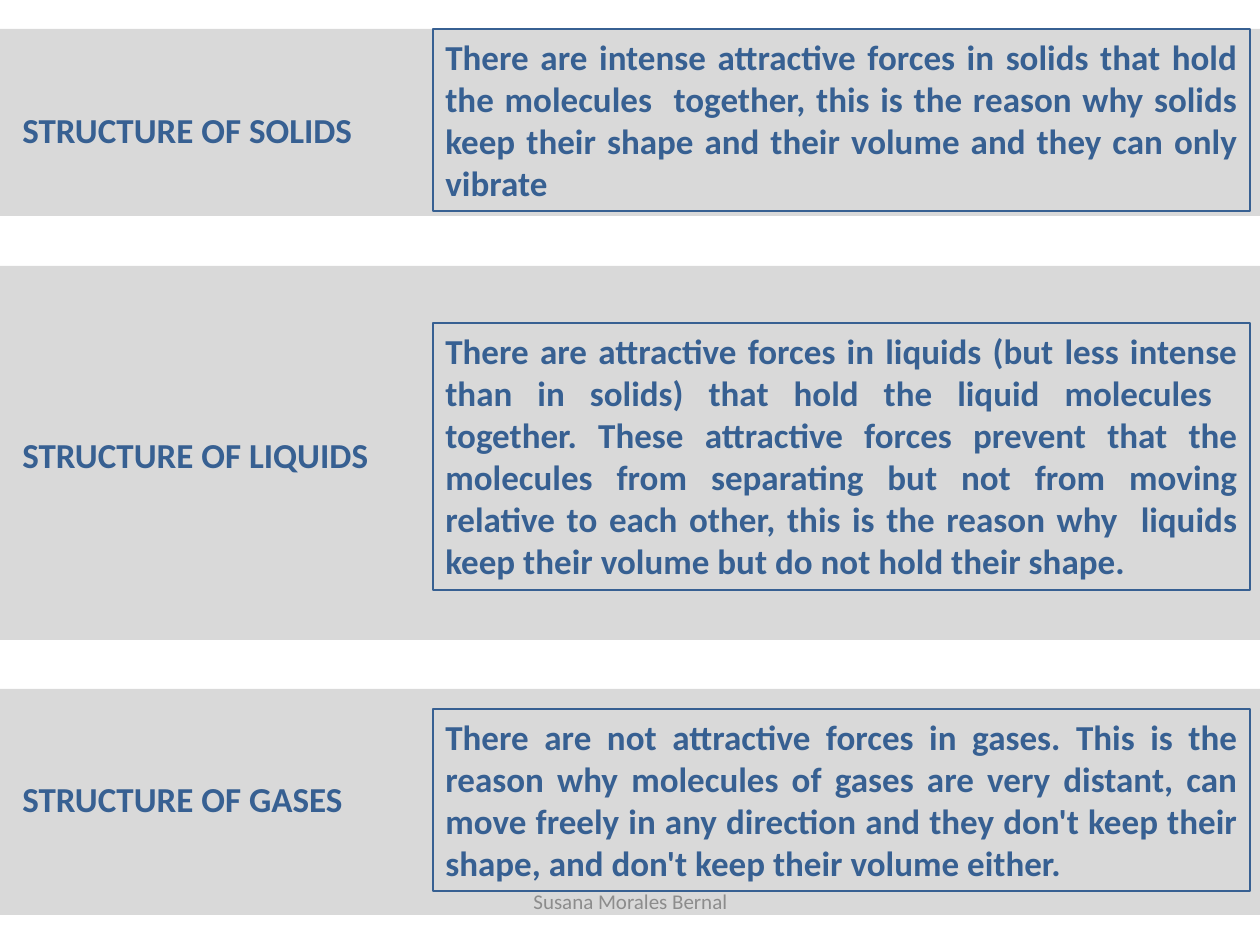
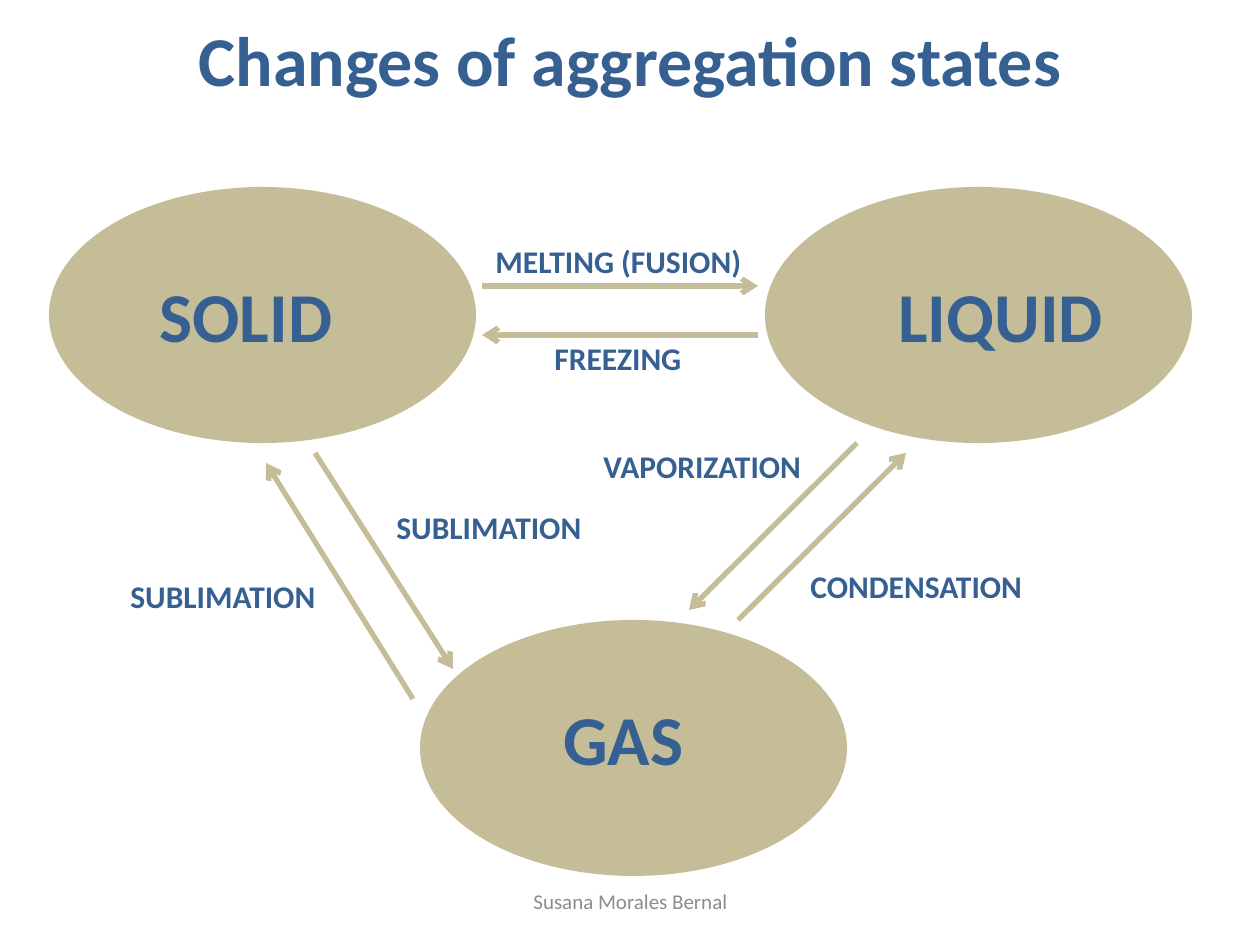
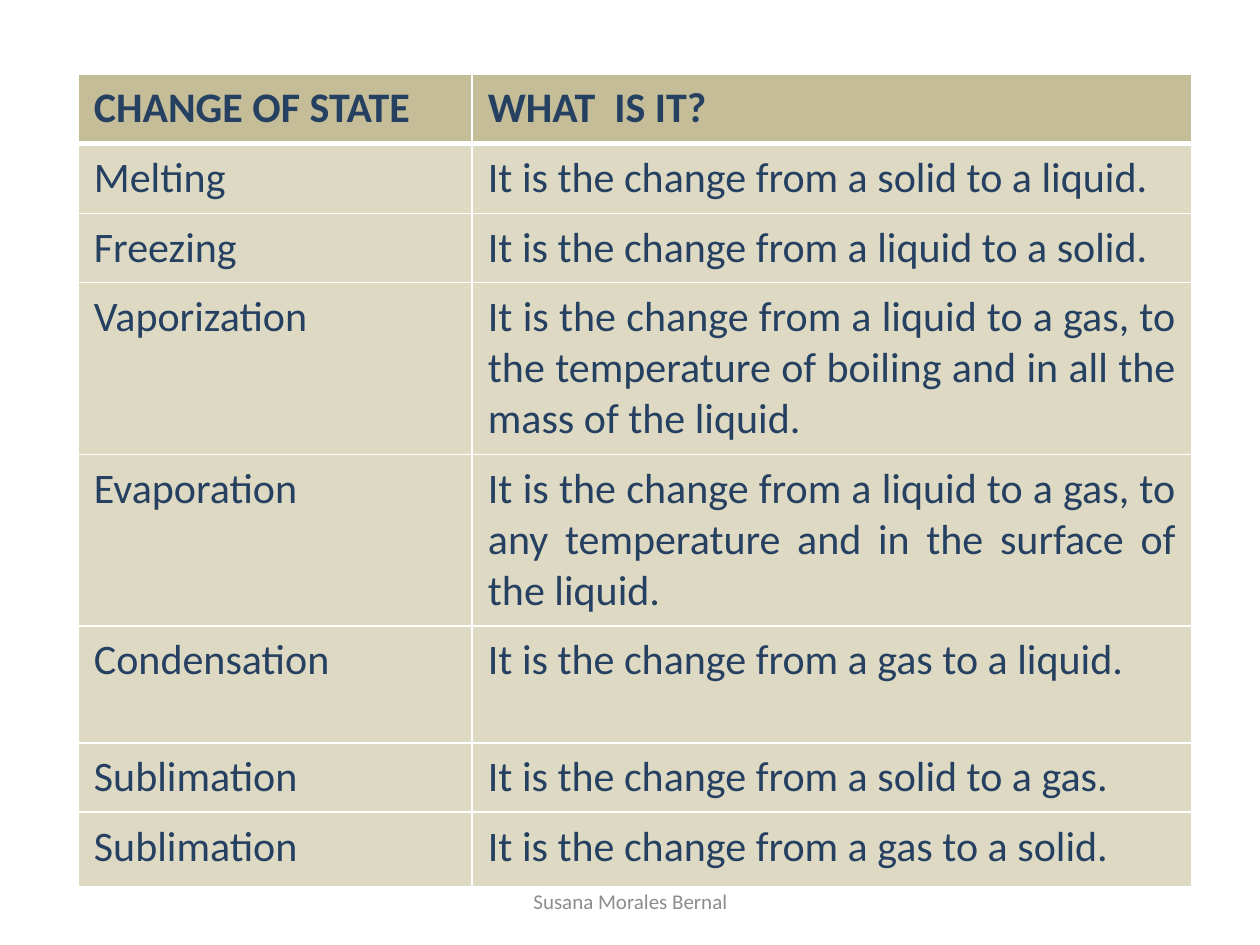
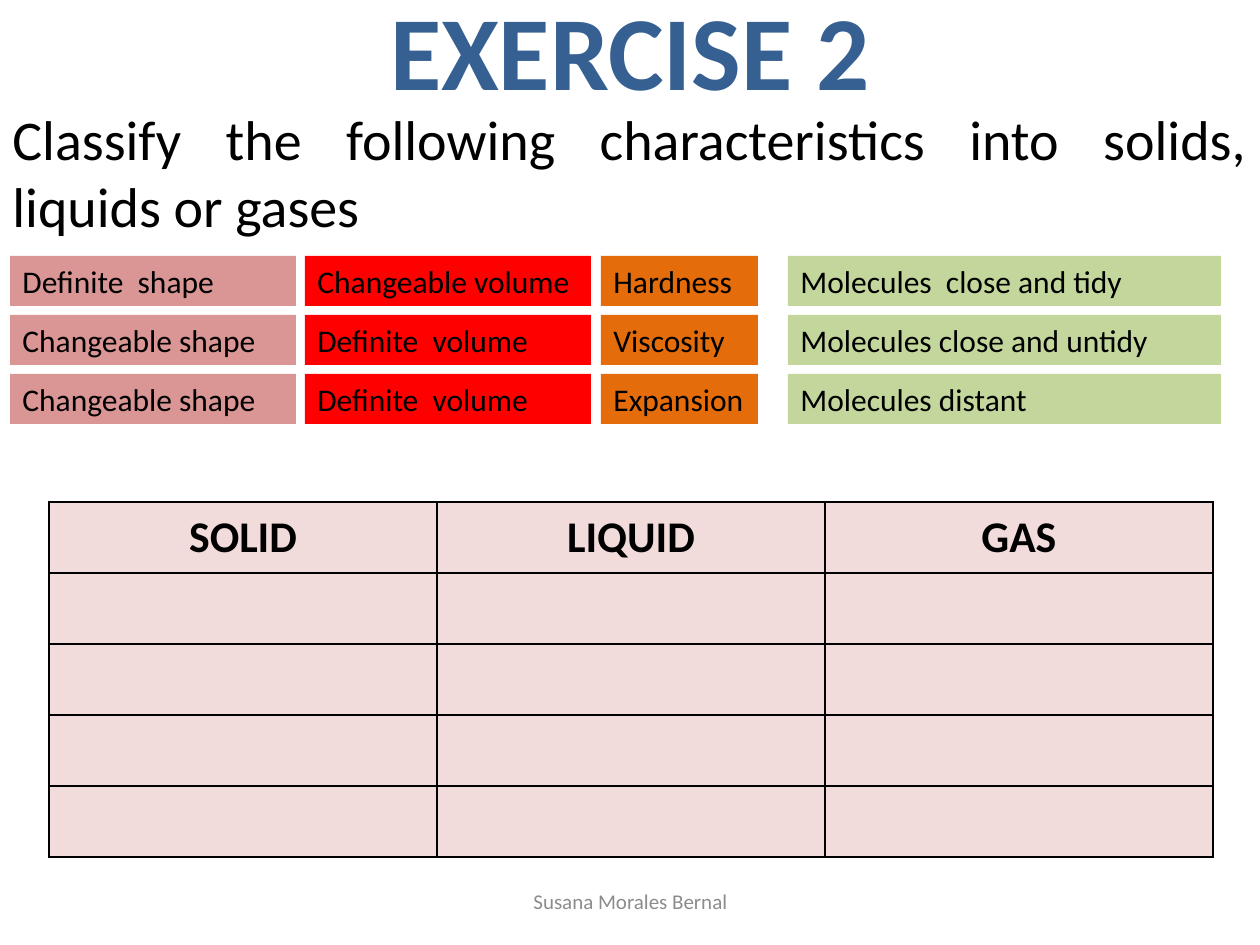
from dataclasses import dataclass

from lxml.etree import SubElement
from pptx import Presentation
from pptx.dml.color import RGBColor
from pptx.enum.shapes import MSO_CONNECTOR, MSO_SHAPE
from pptx.enum.text import MSO_ANCHOR as ANCHOR, MSO_AUTO_SIZE, PP_ALIGN as ALIGN
from pptx.oxml.ns import qn
from pptx.util import Emu, Pt

TITLE_ONLY, BLANK = 5, 6  # layouts of the default template


@dataclass(frozen=True)
class Theme:
    font: str = "Calibri"
    # Colours
    blue: str = "376092"
    navy: str = "254061"
    black: str = "000000"
    white: str = "FFFFFF"
    footer: str = "8C8C8C"
    band: str = "D9D9D9"
    khaki: str = "C4BD97"
    sand: str = "DDD9C3"
    blush: str = "F2DCDB"
    rose: str = "D99694"
    red: str = "FF0000"
    orange: str = "E46C0A"
    green: str = "C3D69B"
    # Type sizes
    exercise: int = 60
    title: int = 40
    task: int = 32
    answers: int = 25
    table: int = 24
    text: int = 20
    label: int = 18
    small: int = 12


T = Theme()


# Basic helpers
def px(n):
    return Emu(round(n * 914400 / 126))


def rgb(value):
    return RGBColor.from_string(value)


def paint(fill, color):
    fill.solid()
    fill.fore_color.rgb = rgb(color)


def write(tf, text, size, color, bold=False, align=ALIGN.LEFT):
    p = tf.paragraphs[0]
    p.text = text
    p.alignment = align
    p.font.name, p.font.size, p.font.bold = T.font, Pt(size), bold
    p.font.color.rgb = rgb(color)


# Kinds of element
def add_text(s, box, text, size, color=T.blue, bold=False, align=ALIGN.LEFT,
             fill=None, line=None, anchor=ANCHOR.TOP):
    sp = s.shapes.add_textbox(*map(px, box))
    if fill:
        paint(sp.fill, fill)
    if line:
        sp.line.color.rgb = rgb(line)
        sp.line.width = Pt(0.75)
    tf = sp.text_frame
    tf.word_wrap = True
    tf.vertical_anchor = anchor
    write(tf, text, size, color, bold, align)


def add_title(s, top, height, text, size):
    sp = s.shapes.title
    sp.left, sp.top, sp.width, sp.height = map(px, (0, top, 1260, height))
    tf = sp.text_frame
    tf.auto_size = MSO_AUTO_SIZE.NONE
    tf.vertical_anchor = ANCHOR.TOP
    write(tf, text, size, T.blue, True, ALIGN.CENTER)


def add_filled(s, kind, box, color):
    sp = s.shapes.add_shape(kind, *map(px, box))
    sp.shadow.inherit = False
    paint(sp.fill, color)
    sp.line.fill.background()


def add_arrow(s, x1, y1, x2, y2):
    cx = s.shapes.add_connector(MSO_CONNECTOR.STRAIGHT, *map(px, (x1, y1, x2, y2)))
    cx.line.color.rgb = rgb(T.khaki)
    cx.line.width = Pt(3)
    SubElement(cx.line._get_or_add_ln(), qn("a:tailEnd"), type="arrow")
    SubElement(cx._element.spPr, qn("a:effectLst"))


def add_table(s, left, top, widths, heights):
    shape = s.shapes.add_table(len(heights), len(widths), px(left), px(top),
                               px(sum(widths)), px(sum(heights)))
    table = shape.table
    table.first_row = table.horz_banding = False
    for column, width in zip(table.columns, widths):
        column.width = px(width)
    for row, height in zip(table.rows, heights):
        row.height = px(height)
    return table


def style_cell(cell, fill, border, side_inset, top_pt=1, bottom_pt=1):
    cell.margin_left = cell.margin_right = px(side_inset)
    cell.margin_top = cell.margin_bottom = px(9)
    tcPr = cell._tc.get_or_add_tcPr()
    for side, width in zip("LRTB", (1, 1, top_pt, bottom_pt)):
        ln = SubElement(tcPr, qn(f"a:ln{side}"), w=str(Pt(width)))
        SubElement(SubElement(ln, qn("a:solidFill")), qn("a:srgbClr"), val=border)
    paint(cell.fill, fill)


def add_footer(s):
    add_text(s, (431, 876, 399, 50), "Susana Morales Bernal", T.small, T.footer,
             align=ALIGN.CENTER, anchor=ANCHOR.MIDDLE)


# Slides
def structure_slide(s):
    # Band top and height, name and its top, description top, height and text
    states = [
        (29, 187, "SOLIDS", 102, 29, 182,
         "There are intense attractive forces in solids that hold the molecules  together, "
         "this is the reason why solids keep their shape and their volume and they can "
         "only vibrate"),
        (266, 374, "LIQUIDS", 427, 323, 267,
         "There are attractive forces in liquids (but less intense than in solids) that "
         "hold the liquid molecules  together. These attractive forces prevent that the "
         "molecules from separating but not from moving relative to each other, this is "
         "the reason why  liquids keep their volume but do not hold their shape."),
        (689, 226, "GASES", 771, 709, 182,
         "There are not attractive forces in gases. This is the reason why molecules of "
         "gases are very distant, can move freely in any direction and they don't keep "
         "their shape, and don't keep their volume either."),
    ]
    for band_top, band_h, name, name_top, top, height, text in states:
        add_filled(s, MSO_SHAPE.RECTANGLE, (0, band_top, 1260, band_h), T.band)
        add_text(s, (10, name_top, 384, 55), f"STRUCTURE OF {name}", T.text, bold=True)
        add_text(s, (433, top, 817, height), text, T.text, bold=True,
                 align=ALIGN.JUSTIFY, line=T.blue)


def changes_slide(s):
    add_title(s, 10, 97, "Changes of aggregation states", T.title)
    # States
    for left, top in ((49, 187), (765, 187), (420, 620)):
        add_filled(s, MSO_SHAPE.OVAL, (left, top, 427, 256), T.khaki)
    for left, top, width, name, align in (
            (108, 266, 276, "SOLID", ALIGN.CENTER),
            (886, 266, 325, "LIQUID", ALIGN.LEFT),
            (551, 689, 266, "GAS", ALIGN.LEFT)):
        add_text(s, (left, top, width, 97), name, T.title, bold=True, align=align)
    # Changes between them
    for ends in ((482, 286, 758, 286), (758, 335, 482, 335),
                 (857, 443, 689, 610), (738, 620, 906, 453),
                 (315, 453, 453, 669), (413, 699, 266, 463)):
        add_arrow(s, *ends)
    for left, top, width, name in (
            (483, 236, 286, "MELTING (FUSION)"), (542, 333, 157, "FREEZING"),
            (798, 561, 246, "CONDENSATION"), (591, 441, 227, "VAPORIZATION"),
            (384, 502, 217, "SUBLIMATION"), (118, 571, 227, "SUBLIMATION")):
        add_text(s, (left, top, width, 50), name, T.label, bold=True)


def definitions_slide(s):
    change = "It is the change from a "
    rows = [
        (67, "CHANGE OF STATE", "WHAT  IS IT?"),
        (70, "Melting", change + "solid to a liquid."),
        (69, "Freezing", change + "liquid to a solid."),
        (170, "Vaporization", change + "liquid to a gas, to the temperature of boiling "
                                       "and in all the mass of the liquid."),
        (171, "Evaporation", change + "liquid to a gas, to any temperature and in the "
                                      "surface of the liquid."),
        (117, "Condensation", change + "gas to a liquid."),
        (68, "Sublimation", change + "solid to a gas."),
        (75, "Sublimation", change + "gas to a solid."),
    ]
    table = add_table(s, 78, 74, (394, 720), [row[0] for row in rows])
    for i, (_, *texts) in enumerate(rows):
        header = i == 0
        for j, text in enumerate(texts):
            cell = table.cell(i, j)
            style_cell(cell, T.khaki if header else T.sand, T.white, 16,
                       top_pt=3 if i == 1 else 1, bottom_pt=3 if header else 1)
            align = ALIGN.JUSTIFY if j and not header else ALIGN.LEFT
            write(cell.text_frame, text, T.table, T.navy, header, align)


def exercise_slide(s):
    add_title(s, -21, 140, "EXERCISE 2", T.exercise)
    add_text(s, (0, 98, 1260, 149),
             "Classify the following characteristics into solids, liquids or gases",
             T.task, T.black, align=ALIGN.JUSTIFY)
    # Characteristics to sort
    for left, width, color, names in (
            (10, 286, T.rose, ("Definite  shape", "Changeable shape", "Changeable shape")),
            (305, 286, T.red, ("Changeable volume", "Definite  volume", "Definite  volume")),
            (601, 157, T.orange, ("Hardness", "Viscosity", "Expansion")),
            (788, 433, T.green, ("Molecules  close and tidy", "Molecules close and untidy",
                                 "Molecules distant"))):
        for i, name in enumerate(names):
            add_text(s, (left, 256 + 59 * i, width, 50), name, T.label, T.black, fill=color)
    # Answer grid
    table = add_table(s, 49, 502, [388] * 3, [71] * 5)
    for cell in table.iter_cells():
        style_cell(cell, T.blush, T.black, 18)
    for j, name in enumerate(("SOLID", "LIQUID", "GAS")):
        write(table.cell(0, j).text_frame, name, T.answers, T.black, True, ALIGN.CENTER)


def main():
    prs = Presentation()
    prs.slide_width, prs.slide_height = px(1260), px(945)
    for layout, build in ((BLANK, structure_slide), (TITLE_ONLY, changes_slide),
                          (BLANK, definitions_slide), (TITLE_ONLY, exercise_slide)):
        s = prs.slides.add_slide(prs.slide_layouts[layout])
        build(s)
        add_footer(s)
    prs.save("out.pptx")


if __name__ == "__main__":
    main()
